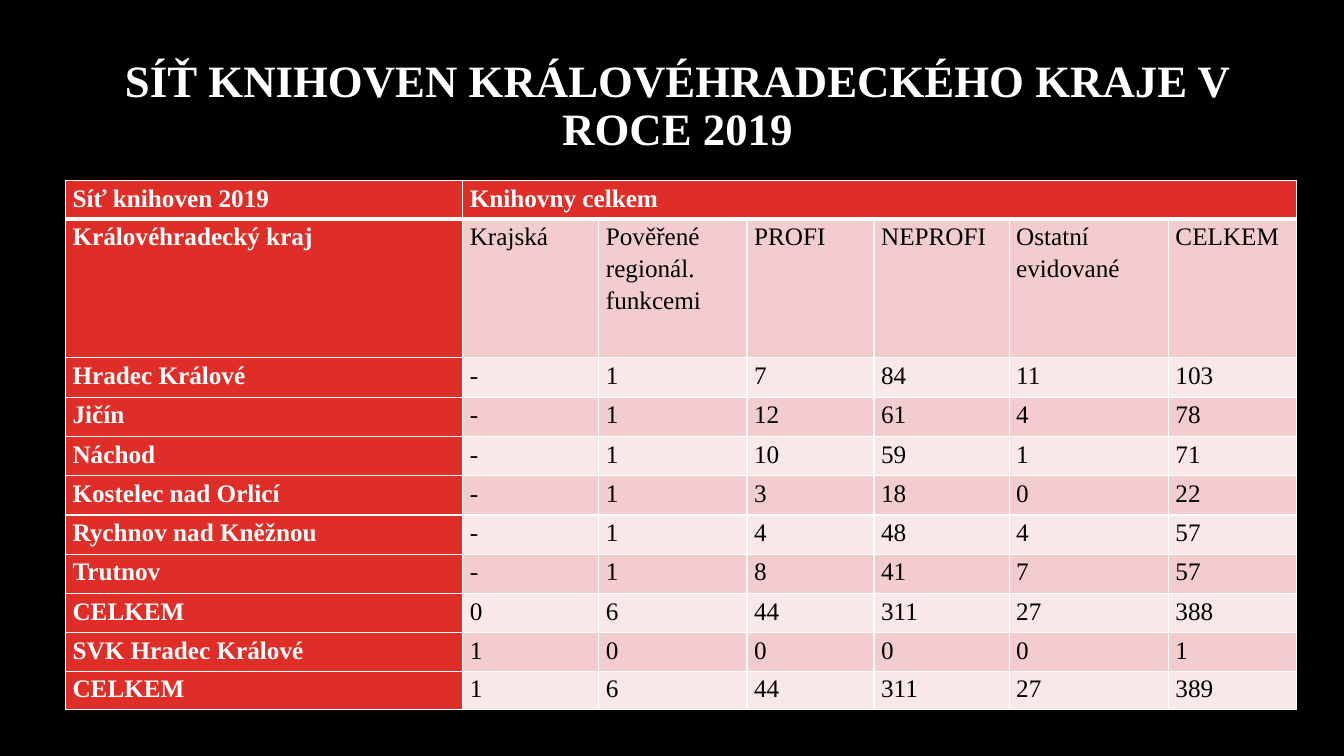
"""Build a slide with a table of the regional library network."""
from lxml import etree
from pptx import Presentation
from pptx.dml.color import RGBColor
from pptx.enum import text
from pptx.oxml import ns
from pptx.util import Inches, Pt

BLACK = RGBColor(0x00, 0x00, 0x00)
WHITE = RGBColor(0xFF, 0xFF, 0xFF)
RED = RGBColor(0xDF, 0x2E, 0x28)
PINK = RGBColor(0xF3, 0xCD, 0xCD)
PALE_PINK = RGBColor(0xF9, 0xE8, 0xE8)
FONT = "Times New Roman"

TITLE = "SÍŤ KNIHOVEN KRÁLOVÉHRADECKÉHO KRAJE V ROCE 2019"
COLUMN_WIDTHS = [3.94, 1.35, 1.47, 1.26, 1.34, 1.58, 1.27]
ROW_HEIGHTS = [0.38, 1.38] + [0.39] * 7 + [0.38] * 2
LIBRARIES = [
    ["Síť knihoven 2019", "Knihovny celkem"],
    ["Královéhradecký kraj", "Krajská", "Pověřené regionál. funkcemi",
     "PROFI", "NEPROFI", "Ostatní evidované", "CELKEM"],
    ["Hradec Králové", "-", 1, 7, 84, 11, 103],
    ["Jičín", "-", 1, 12, 61, 4, 78],
    ["Náchod", "-", 1, 10, 59, 1, 71],
    ["Kostelec nad Orlicí", "-", 1, 3, 18, 0, 22],
    ["Rychnov nad Kněžnou", "-", 1, 4, 48, 4, 57],
    ["Trutnov", "-", 1, 8, 41, 7, 57],
    ["CELKEM", 0, 6, 44, 311, 27, 388],
    ["SVK Hradec Králové", 1, 0, 0, 0, 0, 1],
    ["CELKEM", 1, 6, 44, 311, 27, 389],
]


def set_font(para, size, color, bold):
    """Set the font of a whole paragraph."""
    font = para.font
    font.name, font.size, font.bold = FONT, Pt(size), bold
    font.color.rgb = color


def add_title(page):
    """Fill and place the title placeholder."""
    title = page.shapes.title
    title.left, title.top = Inches(0.65), Inches(0.6)
    title.width, title.height = Inches(12.14), Inches(1.41)
    frame = title.text_frame
    frame.text = TITLE
    frame.word_wrap = True
    frame.auto_size = text.MSO_AUTO_SIZE.NONE
    frame.vertical_anchor = text.MSO_ANCHOR.MIDDLE
    frame.margin_top, frame.margin_bottom = 0, Inches(0.49)
    para = frame.paragraphs[0]
    para.alignment = text.PP_ALIGN.CENTER
    para.line_spacing = 0.9
    set_font(para, 32, WHITE, True)


def add_borders(cell, widths):
    """Draw white cell borders with the given width in points per side."""
    properties = cell._tc.get_or_add_tcPr()
    for side, width in widths.items():
        line = etree.SubElement(properties, ns.qn(f"a:ln{side}"), w=str(Pt(width)))
        fill = etree.SubElement(line, ns.qn("a:solidFill"))
        etree.SubElement(fill, ns.qn("a:srgbClr"), val=str(WHITE))


def style_cell(cell, row, column):
    """Format a cell by its place in the table."""
    heading = row == 0 or column == 0
    cell.margin_left = cell.margin_right = Inches(0.07)
    cell.margin_top = cell.margin_bottom = 0
    add_borders(cell, {"L": 1, "R": 1, "T": 3 if row == 1 else 1,
                       "B": 3 if row == 0 else 1})
    cell.fill.solid()
    cell.fill.fore_color.rgb = RED if heading else PINK if row % 2 else PALE_PINK
    para = cell.text_frame.paragraphs[0]
    para.line_spacing = 1.15
    set_font(para, 18, WHITE if heading else BLACK, heading)


def add_library_table(page):
    """Add the table of libraries by district and type."""
    table = page.shapes.add_table(
        len(ROW_HEIGHTS), len(COLUMN_WIDTHS), Inches(0.65), Inches(1.79),
        Inches(sum(COLUMN_WIDTHS)), Inches(sum(ROW_HEIGHTS))).table
    for column, width in zip(table.columns, COLUMN_WIDTHS):
        column.width = Inches(width)
    for row, height in zip(table.rows, ROW_HEIGHTS):
        row.height = Inches(height)
    for row, values in enumerate(LIBRARIES):
        for column, value in enumerate(values):
            table.cell(row, column).text = str(value)
        for column in range(len(COLUMN_WIDTHS)):
            style_cell(table.cell(row, column), row, column)
    table.cell(0, 1).merge(table.cell(0, len(COLUMN_WIDTHS) - 1))


def main():
    """Build and save the deck."""
    deck = Presentation()
    deck.slide_width, deck.slide_height = Inches(13.33), Inches(7.5)
    page = deck.slides.add_slide(deck.slide_layouts[5])
    page.background.fill.solid()
    page.background.fill.fore_color.rgb = BLACK
    add_title(page)
    add_library_table(page)
    deck.save("out.pptx")


if __name__ == "__main__":
    main()
